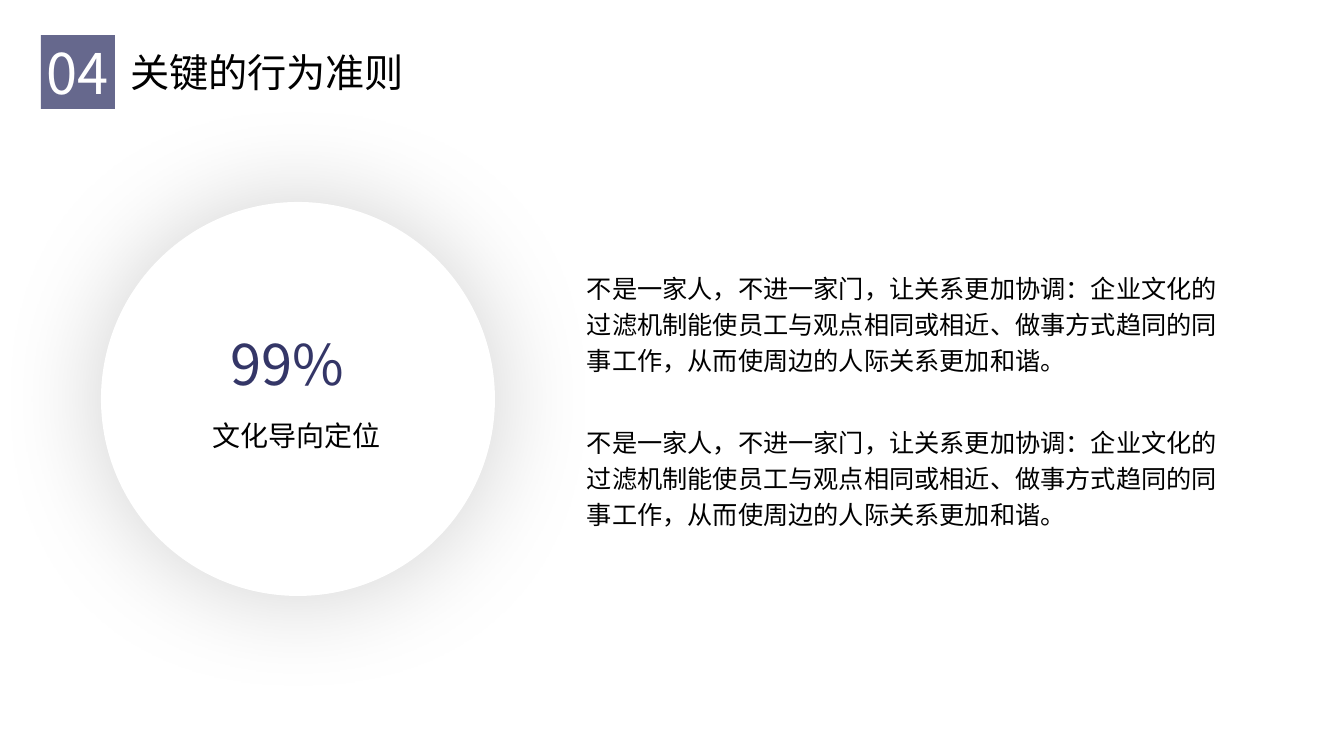
from lxml.etree import SubElement
from pptx import Presentation
from pptx.dml.color import RGBColor
from pptx.enum.shapes import MSO_SHAPE
from pptx.enum.text import MSO_ANCHOR, MSO_AUTO_SIZE, PP_ALIGN
from pptx.oxml.ns import qn
from pptx.util import Pt

PX = 914400 / 100.8
FONT = "Noto Sans CJK SC"
COLORS = {"ink": "000000", "paper": "FFFFFF", "accent": "343667"}
PRINCIPLE = (
    "不是一家人，不进一家门，让关系更加协调：企业文化的过滤机制能使员工与观点"
    "相同或相近、做事方式趋同的同事工作，从而使周边的人际关系更加和谐。"
)


def emu(*pixels):
    return [round(value * PX) for value in pixels]


def write(shape, text, size, color="ink", align=PP_ALIGN.LEFT, spacing=1.0,
          anchor=MSO_ANCHOR.TOP):
    """Put one formatted paragraph in a shape, with Latin and East Asian fonts."""
    frame = shape.text_frame
    frame_format = {"word_wrap": True, "auto_size": MSO_AUTO_SIZE.NONE,
                    "vertical_anchor": anchor}
    for name, value in frame_format.items():
        setattr(frame, name, value)
    para = frame.paragraphs[0]
    para.alignment = align
    para.line_spacing = spacing
    span = para.add_run()
    span.text = text
    span.font.size = Pt(size)
    span.font.name = FONT
    span.font.color.rgb = RGBColor.from_string(COLORS[color])
    SubElement(span.font._element, qn("a:ea"), typeface=FONT)


deck = Presentation()
deck.slide_width, deck.slide_height = emu(1344, 756)
page = deck.slides.add_slide(deck.slide_layouts[5])
shapes = page.shapes

# Heading
title = shapes.title
title.left, title.top, title.width, title.height = emu(120, 43, 326, 57)
write(title, "关键的行为准则", 28)

badge = shapes.add_shape(MSO_SHAPE.RECTANGLE, *emu(41, 35, 74, 74))
circle = shapes.add_shape(MSO_SHAPE.OVAL, *emu(101, 202, 394, 394))
for shape, color in ((badge, "accent"), (circle, "paper")):
    shape.shadow.inherit = False
    shape.fill.solid()
    shape.fill.fore_color.rgb = RGBColor.from_string(COLORS[color])
    shape.line.fill.background()

badge_color = badge._element.spPr.find(qn("a:solidFill")).find(qn("a:srgbClr"))
SubElement(badge_color, qn("a:alpha"), val="75000")
badge.text_frame.margin_left = badge.text_frame.margin_right = 0
write(badge, "04", 40, "paper", PP_ALIGN.CENTER, anchor=MSO_ANCHOR.MIDDLE)

# Soft glow around the circle
effects = circle._element.spPr.find(qn("a:effectLst"))
glow = SubElement(effects, qn("a:outerShdw"), blurRad=str(Pt(77)), dist="0",
                  dir="0", algn="ctr", rotWithShape="0")
glow_color = SubElement(glow, qn("a:srgbClr"), val=COLORS["ink"])
SubElement(glow_color, qn("a:alpha"), val="18000")

# Figure and its label
share = shapes.add_textbox(*emu(221, 325, 153, 78))
write(share, "99%", 40, "accent")
label = shapes.add_textbox(*emu(157, 414, 280, 44))
write(label, "文化导向定位", 20, align=PP_ALIGN.CENTER)

# Principles
for top in (262, 416):
    box = shapes.add_textbox(*emu(577, top, 652, 120))
    write(box, PRINCIPLE, 18, spacing=1.2)

deck.save("out.pptx")
